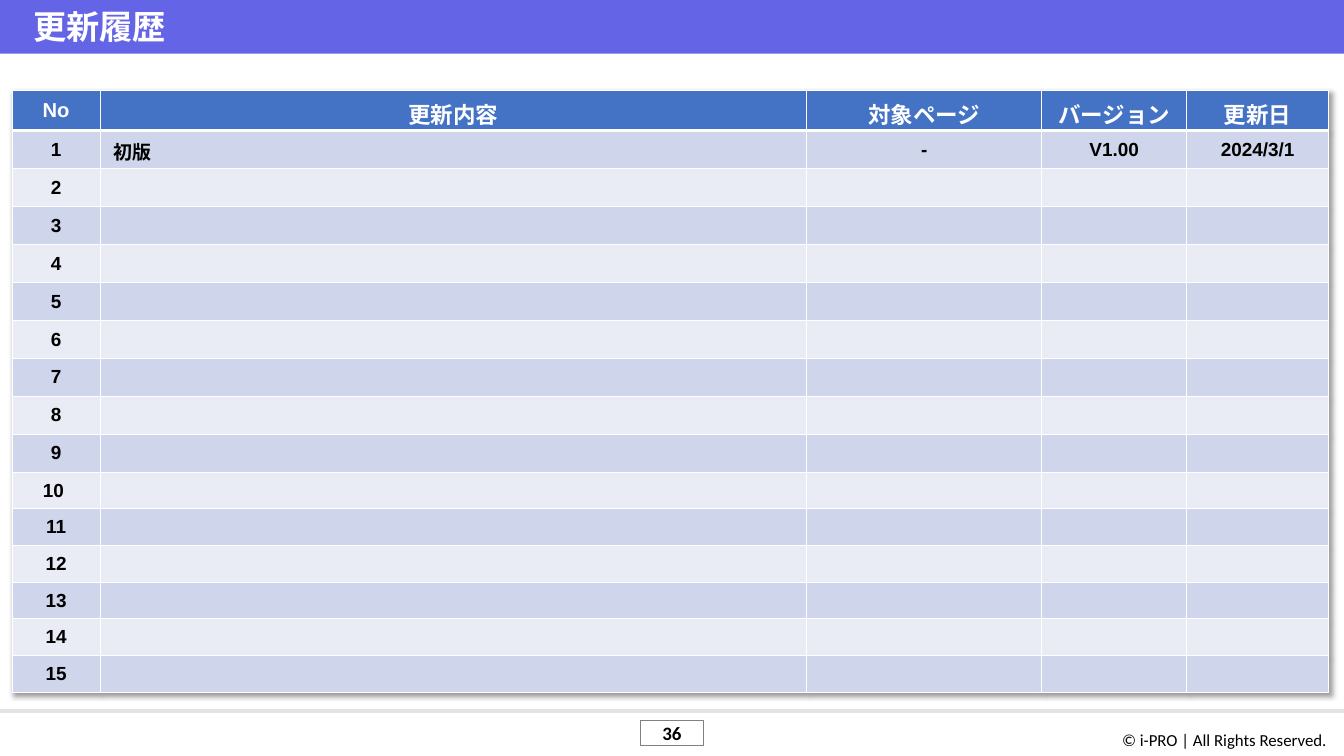
from dataclasses import dataclass

from lxml import etree
from pptx import Presentation
from pptx.dml.color import RGBColor
from pptx.enum.lang import MSO_LANGUAGE_ID
from pptx.enum.shapes import MSO_CONNECTOR, MSO_SHAPE
from pptx.enum.text import MSO_ANCHOR, PP_ALIGN
from pptx.oxml import parse_xml
from pptx.oxml.ns import nsdecls, qn
from pptx.util import Cm, Pt

LEFT, MID, RIGHT = PP_ALIGN.LEFT, PP_ALIGN.CENTER, PP_ALIGN.RIGHT
CENTER = MSO_ANCHOR.MIDDLE
RECT, LINE = MSO_SHAPE.RECTANGLE, MSO_CONNECTOR.STRAIGHT
JAPAN = MSO_LANGUAGE_ID.JAPANESE

WIDE, HIGH = 40, 22.5
HEADS = ["No", "更新内容", "対象ページ", "バージョン", "更新日"]
FIRST = ["1", "初版", "-", "V1.00", "2024/3/1"]
COLS = [2.62, 21.03, 6.99, 4.32, 4.22]
ROWS = [1.2] + [1.13] * 9 + [1.09] * 6


@dataclass(frozen=True)
class Theme:
    """Colours, fonts and type sizes of the slide."""
    bar: str = "6464E6"
    head: str = "4472C4"
    odd: str = "CFD5EA"
    even: str = "E9EBF5"
    white: str = "FFFFFF"
    ink: str = "000000"
    rule: str = "E2E3E3"
    frame: str = "808080"
    main: str = "Arial"
    foot: str = "Calibri"
    title: float = 28
    label: float = 19
    number: float = 17
    body: float = 16
    small: float = 14.2


class Page:
    """Draws elements on one slide in one style."""

    def __init__(self, slide, theme):
        self.shapes = slide.shapes
        self.theme = theme

    def words(self, frame, text, size, color, font, align=LEFT, bold=True):
        """Put one run of text into a frame."""
        para = frame.paragraphs[0]
        para.alignment = align
        run = para.add_run()
        run.text = text
        run.font.name = font
        run.font.size = Pt(size)
        run.font.bold = bold
        run.font.color.rgb = RGBColor.from_string(color)
        run.font.language_id = JAPAN

    def box(self, x, y, w, h, fill=None, edge=None):
        """Draw a rectangle and return its text frame."""
        shape = self.shapes.add_shape(RECT, Cm(x), Cm(y), Cm(w), Cm(h))
        shape.shadow.inherit = False
        if fill:
            shape.fill.solid()
            shape.fill.fore_color.rgb = RGBColor.from_string(fill)
        else:
            shape.fill.background()
        if edge:
            shape.line.color.rgb = RGBColor.from_string(edge)
            shape.line.width = Pt(0.75)
        else:
            shape.line.fill.background()
        shape.text_frame.vertical_anchor = CENTER
        return shape.text_frame

    def text(self, x, y, w, h, wrap=True):
        """Add a text box and return its frame."""
        frame = self.shapes.add_textbox(Cm(x), Cm(y), Cm(w), Cm(h)).text_frame
        frame.word_wrap = wrap
        return frame

    def line(self, x, y, end, color, width):
        """Draw a level line."""
        line = self.shapes.add_connector(LINE, Cm(x), Cm(y), Cm(end), Cm(y))
        line.line.color.rgb = RGBColor.from_string(color)
        line.line.width = Pt(width)
        etree.SubElement(line._element.spPr, qn("a:effectLst"))

    def cell(self, cell, fill, base):
        """Give a cell its borders, fill and margins."""
        props = cell._tc.get_or_add_tcPr()
        for side, width in zip("LRTB", (1, 1, 1, base)):
            props.append(parse_xml(
                f'<a:ln{side} {nsdecls("a")} w="{Pt(width)}"><a:solidFill>'
                f'<a:srgbClr val="{self.theme.white}"/></a:solidFill></a:ln{side}>'))
        cell.fill.solid()
        cell.fill.fore_color.rgb = RGBColor.from_string(fill)
        cell.vertical_anchor = CENTER
        cell.margin_left = cell.margin_right = Cm(0.4)
        gap = 0.2 if cell.text else 0
        cell.margin_top = cell.margin_bottom = Cm(gap)

    def table(self, x, y, data):
        """Draw the history table with a soft shadow."""
        look = self.theme
        table = self.shapes.add_table(
            len(ROWS), len(COLS), Cm(x), Cm(y), Cm(sum(COLS)), Cm(sum(ROWS))).table
        table._tbl.tblPr.insert(0, parse_xml(
            f'<a:effectLst {nsdecls("a")}><a:outerShdw blurRad="50800" dist="38100" '
            f'dir="2700000" algn="tl" rotWithShape="0"><a:srgbClr val="{look.ink}">'
            '<a:alpha val="40000"/></a:srgbClr></a:outerShdw></a:effectLst>'))
        for col, width in zip(table.columns, COLS):
            col.width = Cm(width)
        for row, height in zip(table.rows, ROWS):
            row.height = Cm(height)
        for i, row in enumerate(data):
            top = i == 0
            fill = look.head if top else look.odd if i % 2 else look.even
            color = look.white if top else look.ink
            for j, word in enumerate(row):
                size = look.body
                if top:
                    size = look.label if j else look.number
                cell = table.cell(i, j)
                if word:
                    align = LEFT if j == 1 and not top else MID
                    self.words(cell.text_frame, word, size, color, look.main, align)
                self.cell(cell, fill, 3 if top else 1)


def main():
    """Build and save the slide."""
    deck = Presentation()
    deck.slide_width, deck.slide_height = Cm(WIDE), Cm(HIGH)
    look = Theme()
    page = Page(deck.slides.add_slide(deck.slide_layouts[6]), look)

    page.box(0, 0, WIDE, 1.6, look.bar)
    legal = page.text(33.05, 21.59, 6.68, 0.86, wrap=False)
    page.words(legal, "© i-PRO | All Rights Reserved.", look.small,
               look.ink, look.foot, RIGHT, bold=False)
    page.line(0, 21.16, WIDE, look.rule, 3)
    number = page.box(19.05, 21.44, 1.9, 0.74, edge=look.frame)
    number.margin_top = number.margin_bottom = 0
    page.words(number, "36", look.body, look.ink, look.foot, MID)

    labels = [str(n) for n in range(2, len(ROWS))]
    labels[8] = "10 "
    blank = [""] * (len(COLS) - 1)
    page.table(0.36, 2.69, [HEADS, FIRST] + [[label] + blank for label in labels])

    title = page.text(0, 0, WIDE, 1.55)
    title.vertical_anchor = CENTER
    title.margin_left = Cm(0.99)
    page.words(title, "更新履歴", look.title, look.white, look.main)
    deck.save("out.pptx")


if __name__ == "__main__":
    main()
